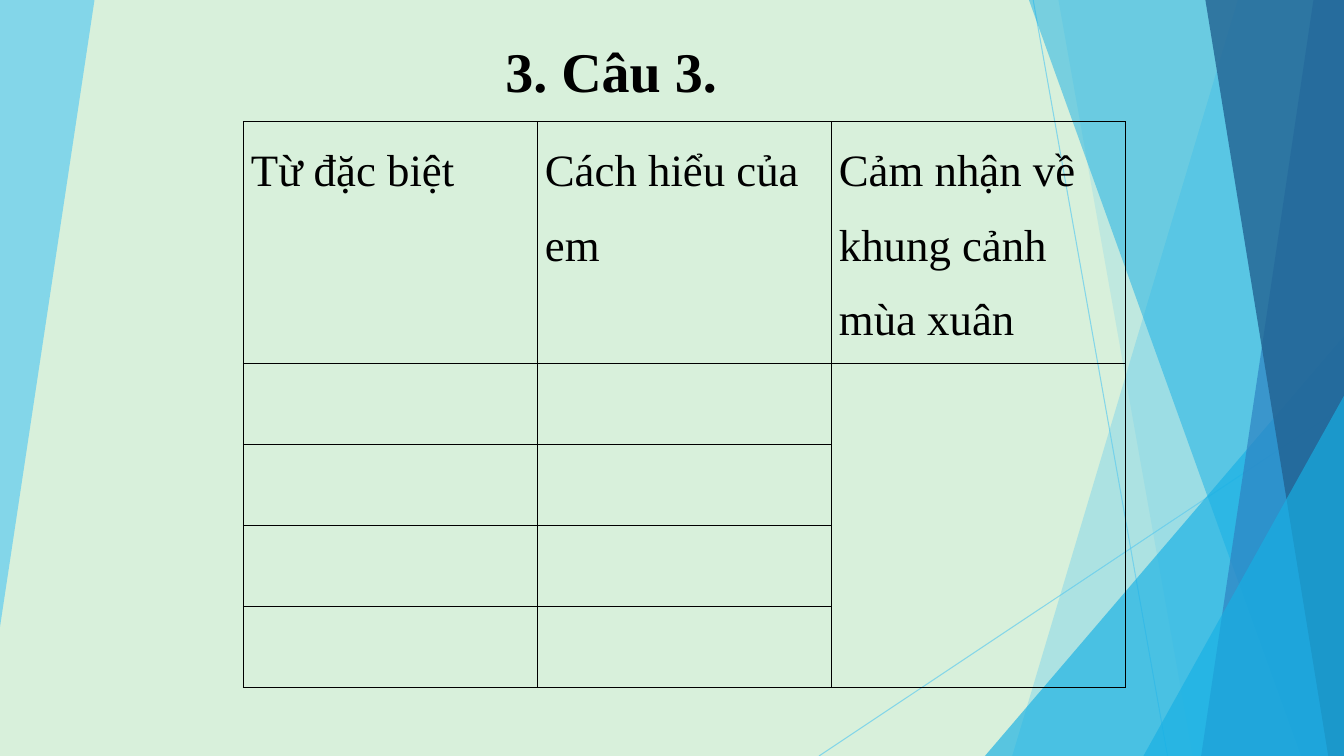
from lxml.etree import SubElement
from pptx import Presentation
from pptx.dml.color import RGBColor
from pptx.enum.shapes import MSO_CONNECTOR as Connector, MSO_SHAPE as Shape
from pptx.enum.text import MSO_AUTO_SIZE as AutoSize, PP_ALIGN as Align
from pptx.oxml.ns import qn
from pptx.util import Pt

PX = 9525
WIDTH, HEIGHT = 1280, 720
MINT = RGBColor(0xD8, 0xF0, 0xDB)
SKY = RGBColor(0x5F, 0xCB, 0xEF)
AZURE = RGBColor(0x17, 0xB0, 0xE4)
BLUE = RGBColor(0x2E, 0x83, 0xC3)
NAVY = RGBColor(0x22, 0x62, 0x92)
BLACK = RGBColor(0, 0, 0)

HEADERS = ["Từ đặc biệt", "Cách hiểu của em", "Cảm nhận về khung cảnh mùa xuân"]
ROW_HEIGHTS = [230] + [77] * 4
COLUMN_WIDTH = 280


class SlideBuilder:
    """Draws styled elements on one slide, with lengths in px."""

    font_name = "Times New Roman"

    def __init__(self, presentation):
        self.slide = presentation.slides.add_slide(presentation.slide_layouts[6])
        background = self.slide.background.fill
        background.solid()
        background.fore_color.rgb = MINT

    def paint(self, fill, color, opacity):
        fill.solid()
        fill.fore_color.rgb = color
        for tone in fill._xPr.iter(qn("a:srgbClr")):
            SubElement(tone, qn("a:alpha"), val=str(opacity * 1000))

    def finish(self, shape, color, opacity):
        shape.shadow.inherit = False
        shape.line.fill.background()
        self.paint(shape.fill, color, opacity)

    def facet(self, points, color, opacity):
        outline = self.slide.shapes.build_freeform(*points[0], scale=PX)
        outline.add_line_segments(points[1:], close=True)
        self.finish(outline.convert_to_shape(), color, opacity)

    def right_facet(self, top, bottom, color, opacity):
        corners = [(top, 0), (WIDTH, 0), (WIDTH, HEIGHT), (bottom, HEIGHT)]
        self.facet(corners, color, opacity)

    def corner_triangle(self, left, top, color, opacity):
        box = [n * PX for n in (left, top, WIDTH - left, HEIGHT - top)]
        triangle = self.slide.shapes.add_shape(Shape.ISOSCELES_TRIANGLE, *box)
        triangle.adjustments[0] = 1
        self.finish(triangle, color, opacity)

    def ray(self, *ends):
        ray = self.slide.shapes.add_connector(Connector.STRAIGHT, *(n * PX for n in ends))
        ray.line.width = Pt(0.75)
        self.paint(ray.line.fill, SKY, 70)
        SubElement(ray._element.spPr, qn("a:effectLst"))

    def add_words(self, frame, text, size, bold=False, align=None):
        paragraph = frame.paragraphs[0]
        paragraph.line_spacing = 1.5
        paragraph.alignment = align
        run = paragraph.add_run()
        run.text = text
        style = {"name": self.font_name, "size": Pt(size), "bold": bold}
        for key, value in style.items():
            setattr(run.font, key, value)
        run.font.color.rgb = BLACK

    def title(self, text, *box):
        frame = self.slide.shapes.add_textbox(*(n * PX for n in box)).text_frame
        frame.word_wrap = True
        frame.auto_size = AutoSize.SHAPE_TO_FIT_TEXT
        self.add_words(frame, text, 40, bold=True, align=Align.JUSTIFY)

    def border(self, cell):
        properties = cell._tc.get_or_add_tcPr()
        for side in ("a:lnL", "a:lnR", "a:lnT", "a:lnB"):
            edge = SubElement(properties, qn(side), w=str(Pt(1)))
            ink = SubElement(edge, qn("a:solidFill"))
            SubElement(ink, qn("a:srgbClr"), val=str(BLACK))

    def table(self, left, top):
        box = (left, top, COLUMN_WIDTH * len(HEADERS), sum(ROW_HEIGHTS))
        table = self.slide.shapes.add_table(
            len(ROW_HEIGHTS), len(HEADERS), *(n * PX for n in box)).table
        for flag, value in {"first_row": False, "horz_banding": False}.items():
            setattr(table, flag, value)
        for row, height in zip(table.rows, ROW_HEIGHTS):
            row.height = height * PX
        margins = {"margin_left": 7 * PX, "margin_right": 7 * PX,
                   "margin_top": 0, "margin_bottom": 0}
        for cell in table.iter_cells():
            for key, value in margins.items():
                setattr(cell, key, value)
            self.border(cell)
            cell.fill.background()
        for column, header in enumerate(HEADERS):
            self.add_words(table.cell(0, column).text_frame, header, 32)
        table.cell(1, 2).merge(table.cell(4, 2))


def main():
    presentation = Presentation()
    presentation.slide_width = WIDTH * PX
    presentation.slide_height = HEIGHT * PX
    builder = SlideBuilder(presentation)
    builder.facet([(0, 0), (90, 0), (0, 597)], SKY, 70)
    builder.ray(984, 0, 1112, HEIGHT)
    builder.ray(WIDTH, 387, 780, HEIGHT)
    builder.right_facet(1179, 964, SKY, 36)
    builder.right_facet(1008, 1136, SKY, 20)
    builder.corner_triangle(938, 320, AZURE, 66)
    builder.right_facet(980, 1239, AZURE, 50)
    builder.right_facet(1251, 1144, BLUE, 70)
    builder.right_facet(1148, 1265, NAVY, 80)
    builder.corner_triangle(1089, 377, AZURE, 66)
    builder.title("3. Câu 3.", 472, -2, 336, 95)
    builder.table(232, 116)
    presentation.save("out.pptx")


if __name__ == "__main__":
    main()
